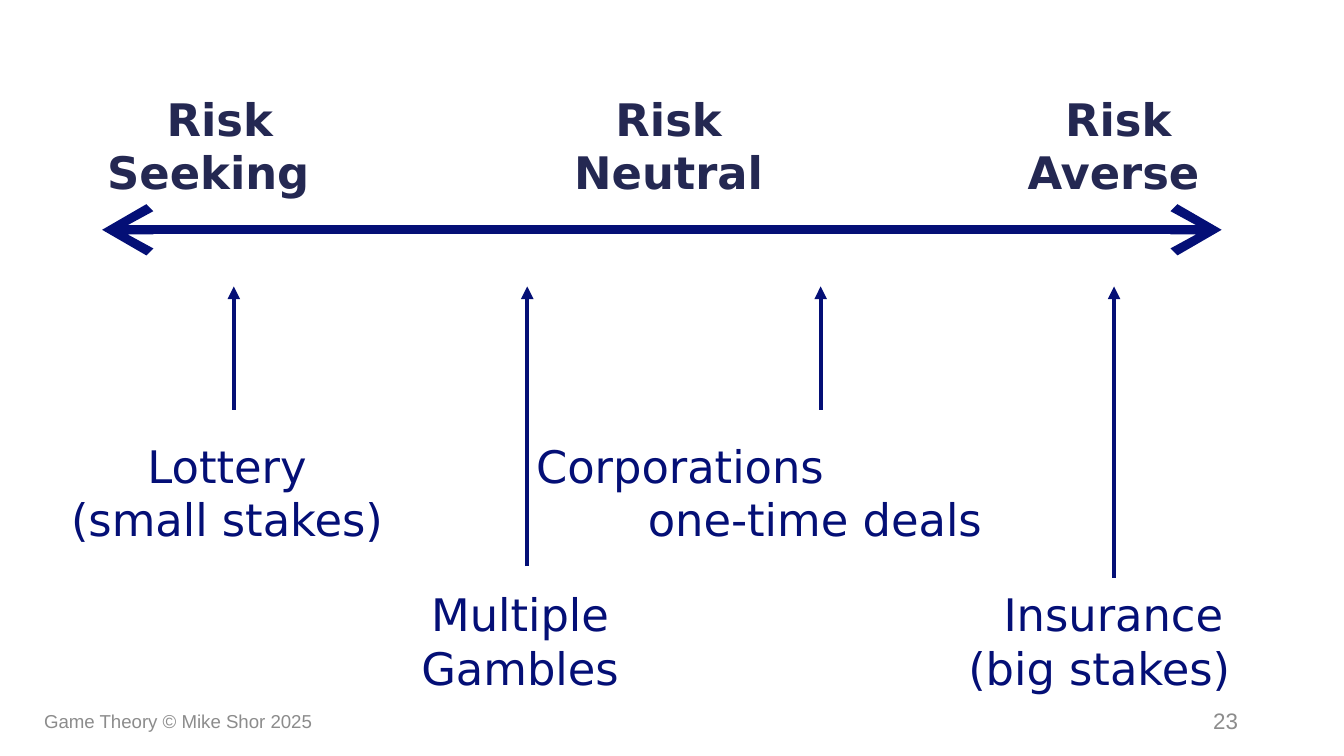
from lxml import etree
from pptx import Presentation
from pptx.dml.color import RGBColor
from pptx.enum.shapes import MSO_CONNECTOR
from pptx.enum.text import MSO_ANCHOR, PP_ALIGN
from pptx.oxml.ns import qn
from pptx.util import Inches, Pt

STRAIGHT = MSO_CONNECTOR.STRAIGHT
TOP, MIDDLE = MSO_ANCHOR.TOP, MSO_ANCHOR.MIDDLE
LEFT, CENTER, RIGHT = PP_ALIGN.LEFT, PP_ALIGN.CENTER, PP_ALIGN.RIGHT

NAVY, INK, GRAY = "040F76", "242852", "8C8C8C"
BODY_FONT, FOOTER_FONT = "DejaVu Sans", "Arial"


def rgb(color):
    return RGBColor.from_string(color)


class RiskSlide:
    """Holds the style and the slide; all lengths are percent of the slide's size."""

    label_width, label_height = 28, 16.2

    def __init__(self, prs):
        self.prs = prs
        self.slide = prs.slides.add_slide(prs.slide_layouts[6])

    def x(self, share):
        return round(self.prs.slide_width * share / 100)

    def y(self, share):
        return round(self.prs.slide_height * share / 100)

    def text(self, lines, left, top, width, height, aligns=(LEFT,), size=24,
             color=NAVY, font=BODY_FONT, bold=False, anchor=TOP):
        """Add a text box; aligns gives one alignment per line."""
        sp = self.slide.shapes.add_textbox(
            self.x(left), self.y(top), self.x(width), self.y(height))
        tf = sp.text_frame
        tf.word_wrap = True
        tf.vertical_anchor = anchor
        tf.text = "\n".join(lines)
        for p, align in zip(tf.paragraphs, aligns):
            p.alignment = align
            for r in p.runs:
                r.font.name, r.font.size, r.font.bold = font, Pt(size), bold
                r.font.color.rgb = rgb(color)
        return tf

    def label(self, lines, center, top, shift=0, **style):
        """Add a centred two-line label whose first line is moved by shift."""
        tf = self.text(lines, center - self.label_width / 2, top, self.label_width,
                       self.label_height, aligns=(CENTER, CENTER), **style)
        if shift:
            # A margin on one side moves centred text by half its width.
            side = "marL" if shift > 0 else "marR"
            pPr = tf.paragraphs[0]._p.get_or_add_pPr()
            pPr.set(side, str(self.x(2 * abs(shift))))

    def arrow(self, start, end, width, size="med", **heads):
        """Draw a line; heads maps headEnd or tailEnd to an arrowhead type."""
        line = self.slide.shapes.add_connector(
            STRAIGHT, self.x(start[0]), self.y(start[1]),
            self.x(end[0]), self.y(end[1]))
        line.line.color.rgb = rgb(NAVY)
        line.line.width = Pt(width)
        ln = line.line._get_or_add_ln()
        for tag, kind in heads.items():
            etree.SubElement(ln, qn(f"a:{tag}"), type=kind, w=size, len=size)
        etree.SubElement(line._element.spPr, qn("a:effectLst"))

    def footer(self, text, left, width, size, align):
        self.text([text], left, 92.7, width, 5.3, aligns=(align,), size=size,
                  color=GRAY, font=FOOTER_FONT, anchor=MIDDLE)


def main():
    prs = Presentation()
    prs.slide_width = Inches(10)
    prs.slide_height = prs.slide_width * 9 // 16
    s = RiskSlide(prs)

    s.footer("23", 70.6, 22.5, 12, RIGHT)
    s.footer("Game Theory © Mike Shor 2025", 2.3, 33.8, 10, LEFT)

    axis_y = 30.4
    s.arrow((7.6, axis_y), (90.9, axis_y), 5, size="lg",
            headEnd="arrow", tailEnd="arrow")
    attitudes = (("Seeking", 15.5, 0.85), ("Neutral", 49.75, 0), ("Averse", 82.85, 0.35))
    for attitude, center, shift in attitudes:
        s.label(["Risk", attitude], center, 11.2, shift, color=INK, bold=True)

    first_x, step, tip_y = 17.4, 21.83, 37.9
    for i, tail_y in enumerate((54.2, 74.9, 54.2, 76.4)):
        x = first_x + i * step
        s.arrow((x, tail_y), (x, tip_y), 2.25, tailEnd="triangle")

    upper, lower = 57.1, 76.7
    s.label(["Lottery", "(small stakes)"], 17.3, upper, -0.4)
    s.label(["Multiple", "Gambles"], 38.7, lower)
    s.label(["Insurance", "(big stakes)"], 81.8, lower, 1.05)
    s.text(["Corporations", "one-time deals"], 38.9, upper, 35.15, s.label_height,
           aligns=(LEFT, RIGHT))

    prs.save("out.pptx")


if __name__ == "__main__":
    main()
